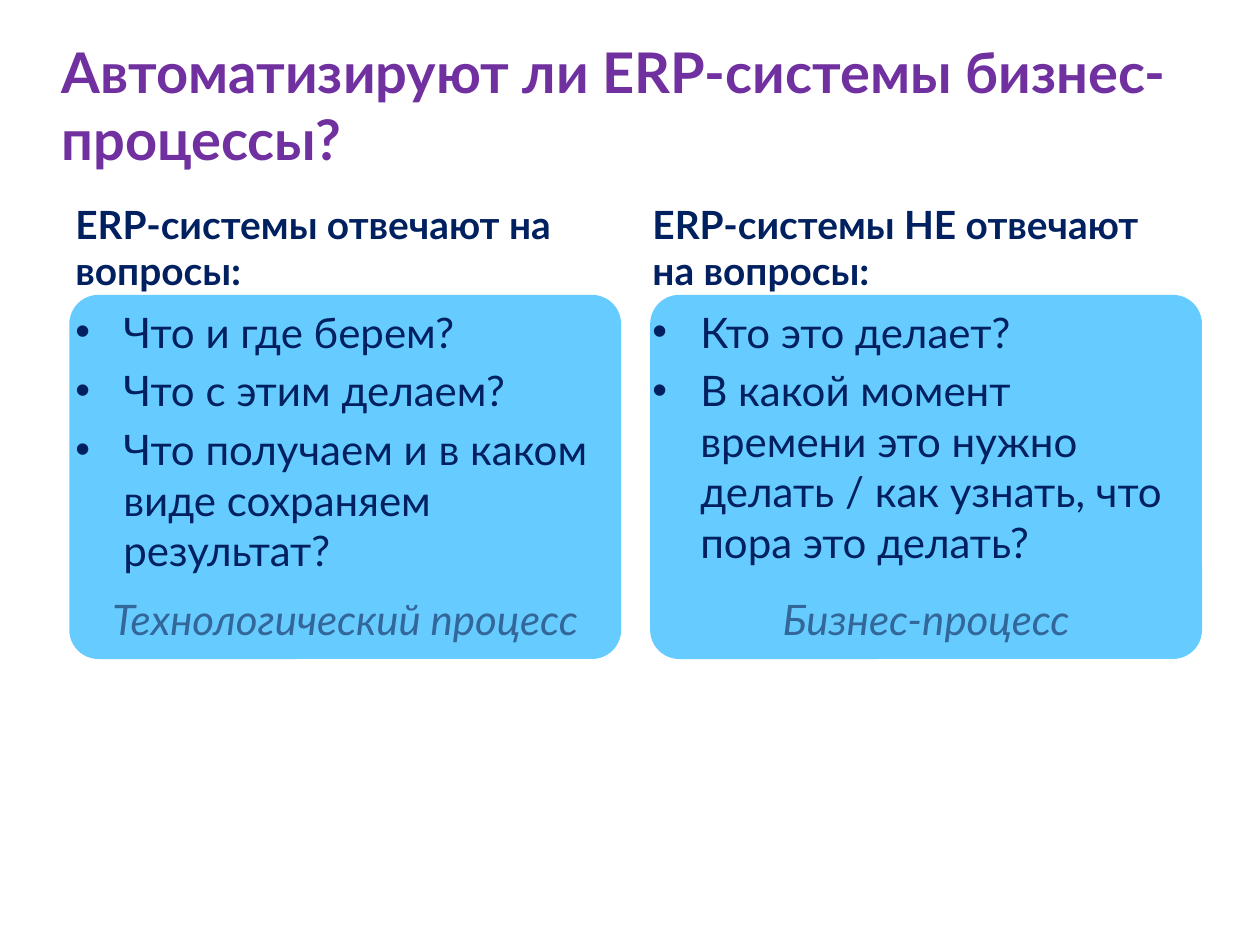
from lxml.etree import SubElement
from pptx import Presentation
from pptx.dml.color import RGBColor
from pptx.enum.shapes import MSO_SHAPE
from pptx.enum.text import MSO_ANCHOR, PP_ALIGN
from pptx.oxml.ns import qn
from pptx.util import Inches, Pt

FONT = "Lato"
PURPLE, NAVY, STEEL, SKY = "7030A0", "002060", "336699", "66CCFF"

# Panel left, text left, heading, questions, kind of process
COLUMNS = [
    (0.55, 0.5, "ERP-системы отвечают на вопросы:",
     ["Что и где берем?", "Что с этим делаем?",
      "Что получаем и в каком виде сохраняем результат?"],
     "Технологический процесс"),
    (5.16, 5.08, "ERP-системы НЕ отвечают на вопросы:",
     ["Кто это делает?",
      "В какой момент времени это нужно делать / как узнать, что пора это делать?"],
     "Бизнес-процесс"),
]


def rgb(color):
    return RGBColor.from_string(color)


def add_run(paragraph, text, size, color, bold=False, italic=False):
    run = paragraph.add_run()
    run.text = text
    font = run.font
    font.name, font.size, font.bold, font.italic = FONT, Pt(size), bold, italic
    font.color.rgb = rgb(color)


def add_text_frame(slide, left, top, width, height, anchor):
    box = slide.shapes.add_textbox(
        Inches(left), Inches(top), Inches(width), Inches(height))
    frame = box.text_frame
    frame.word_wrap = True
    frame.vertical_anchor = anchor
    return frame


def add_heading(slide, left, top, width, height, text, size, color):
    frame = add_text_frame(slide, left, top, width, height, MSO_ANCHOR.BOTTOM)
    add_run(frame.paragraphs[0], text, size, color, bold=True)


def add_panel(slide, left, process):
    panel = slide.shapes.add_shape(
        MSO_SHAPE.ROUNDED_RECTANGLE,
        Inches(left), Inches(2.34), Inches(4.38), Inches(2.89))
    panel.adjustments[0] = 0.08
    panel.shadow.inherit = False
    panel.fill.solid()
    panel.fill.fore_color.rgb = rgb(SKY)
    panel.line.fill.background()

    frame = panel.text_frame
    frame.word_wrap = False
    frame.margin_left = frame.margin_right = 0
    frame.vertical_anchor = MSO_ANCHOR.BOTTOM
    caption = frame.paragraphs[0]
    caption.alignment = PP_ALIGN.CENTER
    add_run(caption, process, 24, STEEL, italic=True)


def add_bullet(paragraph):
    properties = paragraph._p.get_or_add_pPr()
    properties.set("marL", str(Inches(0.38)))
    properties.set("indent", str(Inches(-0.38)))
    SubElement(properties, qn("a:buFont"), typeface="Arial")
    SubElement(properties, qn("a:buChar"), char="•")


def add_questions(slide, left, questions):
    frame = add_text_frame(slide, left, 2.38, 4.42, 4.32, MSO_ANCHOR.TOP)
    for index, question in enumerate(questions):
        paragraph = frame.add_paragraph() if index else frame.paragraphs[0]
        add_bullet(paragraph)
        if index:
            paragraph.space_before = Pt(4.8)
        add_run(paragraph, question, 24, NAVY)


def main():
    presentation = Presentation()
    presentation.slide_width = Inches(10)
    presentation.slide_height = Inches(7.5)
    slide = presentation.slides.add_slide(presentation.slide_layouts[6])

    # Title
    add_heading(slide, 0.39, 0.16, 9, 1.25,
                "Автоматизируют ли ERP-системы бизнес-процессы?", 32, PURPLE)

    # Two columns of questions
    for panel_left, text_left, heading, questions, process in COLUMNS:
        add_panel(slide, panel_left, process)
        add_heading(slide, text_left, 1.68, 4.42, 0.7, heading, 22.2, NAVY)
        add_questions(slide, text_left, questions)

    presentation.save("out.pptx")


if __name__ == "__main__":
    main()
